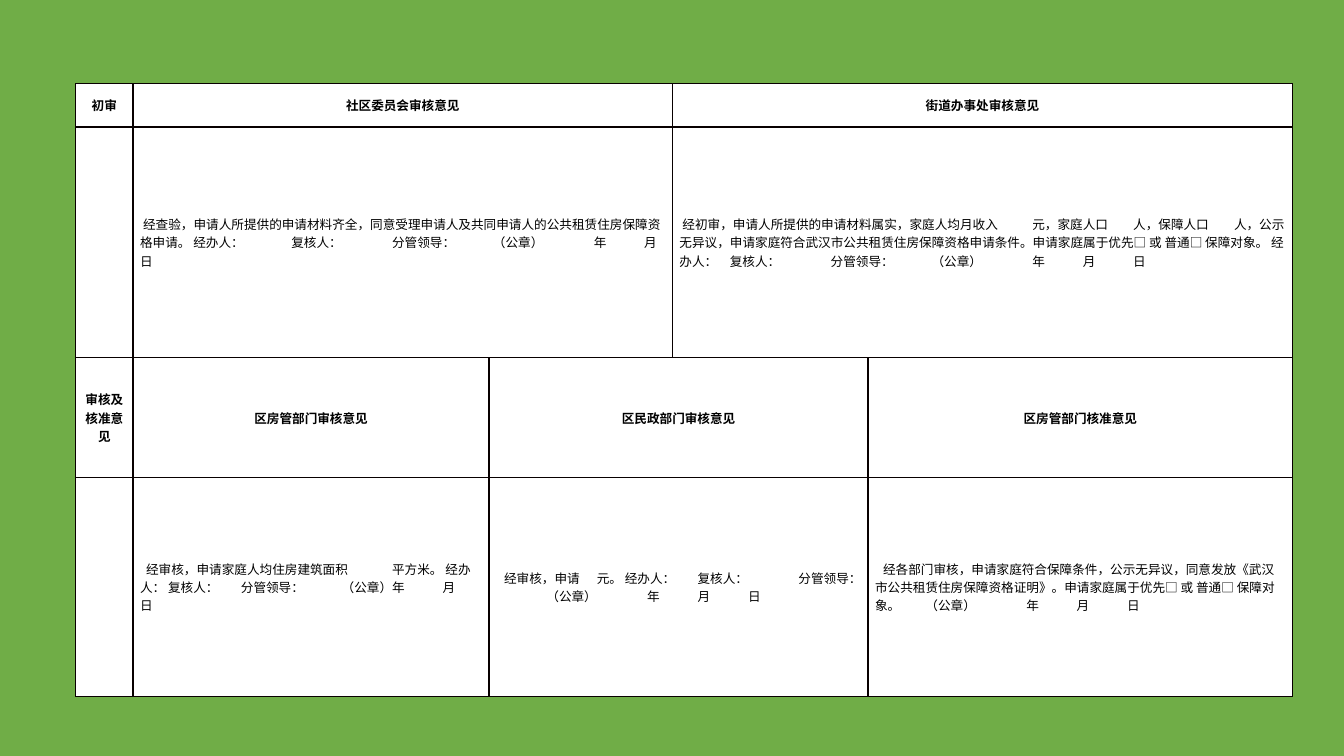
from dataclasses import dataclass

from lxml.etree import SubElement
from pptx import Presentation
from pptx.dml.color import RGBColor
from pptx.enum.text import MSO_ANCHOR, PP_ALIGN
from pptx.oxml.ns import qn
from pptx.util import Inches, Pt

FONT = "Noto Sans CJK SC"
GREEN, WHITE, BLACK, BORDER = "70AD47", "FFFFFF", "000000", "080000"
COLUMN_WIDTHS = (0.57, 3.53, 1.82, 1.94, 4.21)
ROW_HEIGHTS = (0.43, 2.29, 1.19, 2.17)
BLANK = "_"  # marks an underlined blank to fill in


@dataclass(frozen=True)
class Entry:
    row: int
    column: int
    text: str
    span: int = 1
    heading: bool = False
    indent: float = 0
    stops: tuple[float, ...] = ()


ENTRIES = (
    # First review
    Entry(0, 0, "初审", heading=True),
    Entry(0, 1, "社区委员会审核意见", span=2, heading=True),
    Entry(0, 3, "街道办事处审核意见", span=2, heading=True),
    Entry(1, 1, "经查验，申请人所提供的申请材料齐全，同意受理申请人及共同申请人的"
                "公共租赁住房保障资格申请。 经办人：\t复核人：\t分管领导："
                "\t（公章）\t年\t月 日",
          span=2, indent=0.03, stops=(1.2, 1.86, 4, 4.81, 5.05)),
    Entry(1, 3, "经初审，申请人所提供的申请材料属实，家庭人均月收入_元，家庭人口_人，"
                "保障人口_人，公示无异议，申请家庭符合武汉市公共租赁住房保障资格申请条件。"
                "申请家庭属于优先□ 或 普通□ 保障对象。 经办人：\t复核人："
                "\t分管领导：\t（公章）\t年\t月\t日",
          span=2, indent=0.03,
          stops=(0.76, 2.53, 3.09, 3.29, 3.56, 4.15, 5.01, 5.95)),
    # Review and approval
    Entry(2, 0, "审核及核准意见", heading=True),
    Entry(2, 1, "区房管部门审核意见", heading=True),
    Entry(2, 2, "区民政部门审核意见", span=2, heading=True),
    Entry(2, 4, "区房管部门核准意见", heading=True),
    Entry(3, 1, "经审核，申请家庭人均住房建筑面积_平方米。 经办人： 复核人："
                "\t分管领导：\t（公章）年\t月\t日",
          indent=0.06, stops=(0.64, 1.35, 2.04, 2.34)),
    Entry(3, 2, "经审核，申请_元。 经办人：\t复核人：\t分管领导："
                "\t（公章）\t年\t月\t日",
          span=2, indent=0.08, stops=(0.59, 0.81, 1.1, 2.03, 2.59, 3.3)),
    Entry(3, 4, "经各部门审核，申请家庭符合保障条件，公示无异议，同意发放"
                "《武汉市公共租赁住房保障资格证明》。申请家庭属于优先□ 或 普通□ 保障对象。"
                "\t（公章）\t年\t月\t日",
          indent=0.08, stops=(0.31, 1.34, 1.58, 1.81)),
)


def paint(fill, color: str) -> None:
    fill.solid()
    fill.fore_color.rgb = RGBColor.from_string(color)


def format_cell(cell) -> None:
    properties = cell._tc.get_or_add_tcPr()
    for side in ("lnL", "lnR", "lnT", "lnB"):
        line = SubElement(properties, qn(f"a:{side}"), w=str(Pt(1)))
        solid = SubElement(line, qn("a:solidFill"))
        SubElement(solid, qn("a:srgbClr"), val=BORDER)
    paint(cell.fill, WHITE)
    cell.margin_left = cell.margin_right = Inches(0.07)
    cell.margin_top = cell.margin_bottom = 0
    cell.vertical_anchor = MSO_ANCHOR.MIDDLE


def set_layout(paragraph, entry: Entry) -> None:
    paragraph.alignment = PP_ALIGN.CENTER if entry.heading else PP_ALIGN.LEFT
    properties = paragraph._p.get_or_add_pPr()
    properties.set("indent", str(Inches(entry.indent)))
    if entry.stops:
        stops = SubElement(properties, qn("a:tabLst"))
        for stop in entry.stops:
            SubElement(stops, qn("a:tab"), pos=str(Inches(stop)), algn="l")


def add_words(paragraph, text: str, bold: bool, underline: bool = False) -> None:
    words = paragraph.add_run()
    words.text = text
    words.font.name = FONT
    words.font.size = Pt(9)
    words.font.bold = bold
    words.font.underline = underline
    paint(words.font.fill, BLACK)
    SubElement(words._r.get_or_add_rPr(), qn("a:ea"), typeface=FONT)


def write_entry(table, entry: Entry) -> None:
    cell = table.cell(entry.row, entry.column)
    if entry.span > 1:
        cell.merge(table.cell(entry.row, entry.column + entry.span - 1))
    paragraph = cell.text_frame.paragraphs[0]
    set_layout(paragraph, entry)
    for index, part in enumerate(entry.text.split(BLANK)):
        if index:
            add_words(paragraph, "\t", entry.heading, underline=True)
        add_words(paragraph, part, entry.heading)


def main() -> None:
    presentation = Presentation()
    presentation.slide_width = Inches(13.33)
    presentation.slide_height = Inches(7.5)
    slide = presentation.slides.add_slide(presentation.slide_layouts[6])
    paint(slide.background.fill, GREEN)

    # Form grid
    table = slide.shapes.add_table(
        len(ROW_HEIGHTS), len(COLUMN_WIDTHS), Inches(0.75), Inches(0.83),
        Inches(sum(COLUMN_WIDTHS)), Inches(sum(ROW_HEIGHTS))).table
    table.first_row = table.horz_banding = False
    for column, width in zip(table.columns, COLUMN_WIDTHS):
        column.width = Inches(width)
    for row, height in zip(table.rows, ROW_HEIGHTS):
        row.height = Inches(height)
    for cell in table.iter_cells():
        format_cell(cell)

    # Opinions
    for entry in ENTRIES:
        write_entry(table, entry)

    presentation.save("out.pptx")


if __name__ == "__main__":
    main()
